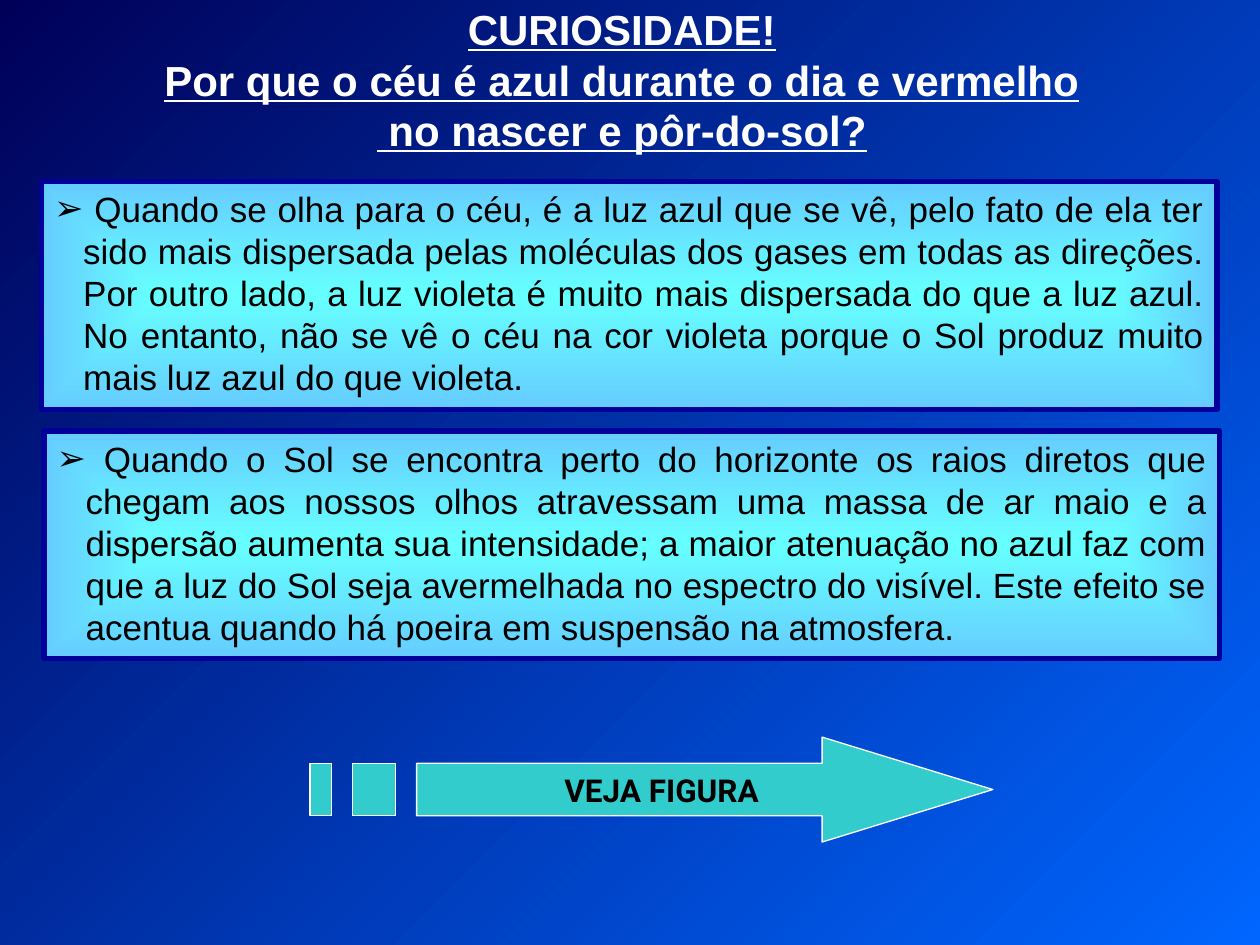
import pptx
import pptx.util
import pptx.dml.color
import pptx.enum.text
import pptx.oxml
import pptx.oxml.ns

COLORS = {
    "night": "000058", "day": "0066FF", "glow": "66FFFF", "sky": "66CCFF",
    "frame": "010199", "arrow": "33CCCC", "white": "FFFFFF", "black": "000000",
}
WIDTH, HEIGHT = 10, 7.5
TITLE = ["CURIOSIDADE!", "Por que o céu é azul durante o dia e vermelho",
         " no nascer e pôr-do-sol?"]
BLUE_SKY = (
    " Quando se olha para o céu, é a luz azul que se vê, pelo fato de ela ter "
    "sido mais dispersada pelas moléculas dos gases em todas as direções. "
    "Por outro lado, a luz violeta é muito mais dispersada do que a luz azul. "
    "No entanto, não se vê o céu na cor violeta porque o Sol produz muito "
    "mais luz azul do que violeta.")
RED_SKY = (
    " Quando o Sol se encontra perto do horizonte os raios diretos que "
    "chegam aos nossos olhos atravessam uma massa de ar maio e a "
    "dispersão aumenta sua intensidade; a maior atenuação no azul faz com "
    "que a luz do Sol seja avermelhada no espectro do visível. Este efeito se "
    "acentua quando há poeira em suspensão na atmosfera.")


def color(name):
    return pptx.dml.color.RGBColor.from_string(COLORS[name])


class SlideBuilder:
    """Holds the style and the current slide; lengths are shares of its size."""

    def __init__(self, deck, layout):
        self.page = deck.slides.add_slide(deck.slide_layouts[layout])

    def x(self, share):
        return pptx.util.Inches(share * WIDTH)

    def y(self, share):
        return pptx.util.Inches(share * HEIGHT)

    def gradient(self, fill, start, end):
        fill.gradient()
        for stop, name, position in zip(fill.gradient_stops, (start, end), (0, 1)):
            stop.color.rgb = color(name)
            stop.position = position

    def background(self, start, end):
        fill = self.page.background.fill
        self.gradient(fill, start, end)
        fill.gradient_angle = 315

    def set_text(self, shape, lines, size, ink, align, font="Arial", bold=False,
                 underline=False, anchor="TOP", wrap=True):
        frame = shape.text_frame
        frame.text = "\n".join(lines)
        frame.auto_size = pptx.enum.text.MSO_AUTO_SIZE.NONE
        frame.word_wrap = wrap
        frame.vertical_anchor = pptx.enum.text.MSO_ANCHOR[anchor]
        for para in frame.paragraphs:
            para.alignment = pptx.enum.text.PP_ALIGN[align]
            para.space_before = pptx.util.Pt(0)
            for span in para.runs:
                span.font.name = font
                span.font.size = pptx.util.Pt(size)
                span.font.bold = bold
                span.font.underline = underline
                span.font.color.rgb = color(ink)

    def place(self, index, left, top, width, height):
        box = self.page.placeholders[index]
        box.left, box.top = self.x(left), self.y(top)
        box.width, box.height = self.x(width), self.y(height)
        return box

    def title(self, lines, *area):
        self.set_text(self.place(0, *area), lines, 24, "white", "CENTER",
                      bold=True, underline=True)

    def bullet_panel(self, index, text, *area):
        box = self.place(index, *area)
        self.gradient(box.fill, "glow", "sky")
        shade = box._element.spPr.find(pptx.oxml.ns.qn("a:gradFill"))
        shade.remove(shade.find(pptx.oxml.ns.qn("a:lin")))
        shade.append(pptx.oxml.parse_xml(
            f'<a:path {pptx.oxml.ns.nsdecls("a")} path="rect"><a:fillToRect '
            'l="50000" t="50000" r="50000" b="50000"/></a:path>'))
        box.line.color.rgb = color("frame")
        box.line.width = pptx.util.Pt(3)
        self.set_text(box, [text], 20, "black", "JUSTIFY")
        properties = box.text_frame.paragraphs[0]._p.get_or_add_pPr()
        indent = pptx.util.Inches(0.23)
        properties.set("marL", str(indent))
        properties.set("indent", str(-indent))
        properties.append(pptx.oxml.parse_xml(
            f'<a:buChar {pptx.oxml.ns.nsdecls("a")} char="➢"/>'))

    def striped_arrow(self, text, left, top, width, height):
        """Arrow with two tail stripes, drawn on 32 columns and 4 rows."""
        head = [(24, 0), (24, 1), (5, 1), (5, 3), (24, 3), (24, 4), (32, 2)]
        stripes = [[(a, 1), (a, 3), (b, 3), (b, 1)] for a, b in ((2, 4), (0, 1))]
        outlines = [[(self.x(left + column * width / 32), self.y(top + row * height / 4))
                     for column, row in points] for points in (head, *stripes)]
        builder = self.page.shapes.build_freeform(*outlines[0][0])
        for outline in outlines:
            if outline is not outlines[0]:
                builder.move_to(*outline[0])
            builder.add_line_segments(outline[1:], close=True)
        arrow = builder.convert_to_shape()
        arrow.shadow.inherit = False
        arrow.fill.solid()
        arrow.fill.fore_color.rgb = color("arrow")
        arrow.line.color.rgb = color("white")
        arrow.line.width = pptx.util.Pt(0.75)
        self.set_text(arrow, [text], 18, "black", "CENTER", font="Roboto",
                      bold=True, anchor="MIDDLE", wrap=False)
        arrow.text_frame.margin_left = pptx.util.Inches(0.26)


def main():
    deck = pptx.Presentation()
    deck.slide_width = pptx.util.Inches(WIDTH)
    deck.slide_height = pptx.util.Inches(HEIGHT)
    slide = SlideBuilder(deck, 3)
    slide.background("night", "day")
    slide.title(TITLE, 0.027, -0.0027, 0.933, 0.173)
    slide.bullet_panel(1, BLUE_SKY, 0.033, 0.192, 0.933, 0.241)
    slide.bullet_panel(2, RED_SKY, 0.035, 0.456, 0.933, 0.241)
    slide.striped_arrow("VEJA FIGURA", 0.246, 0.78, 0.542, 0.111)
    deck.save("out.pptx")


if __name__ == "__main__":
    main()
